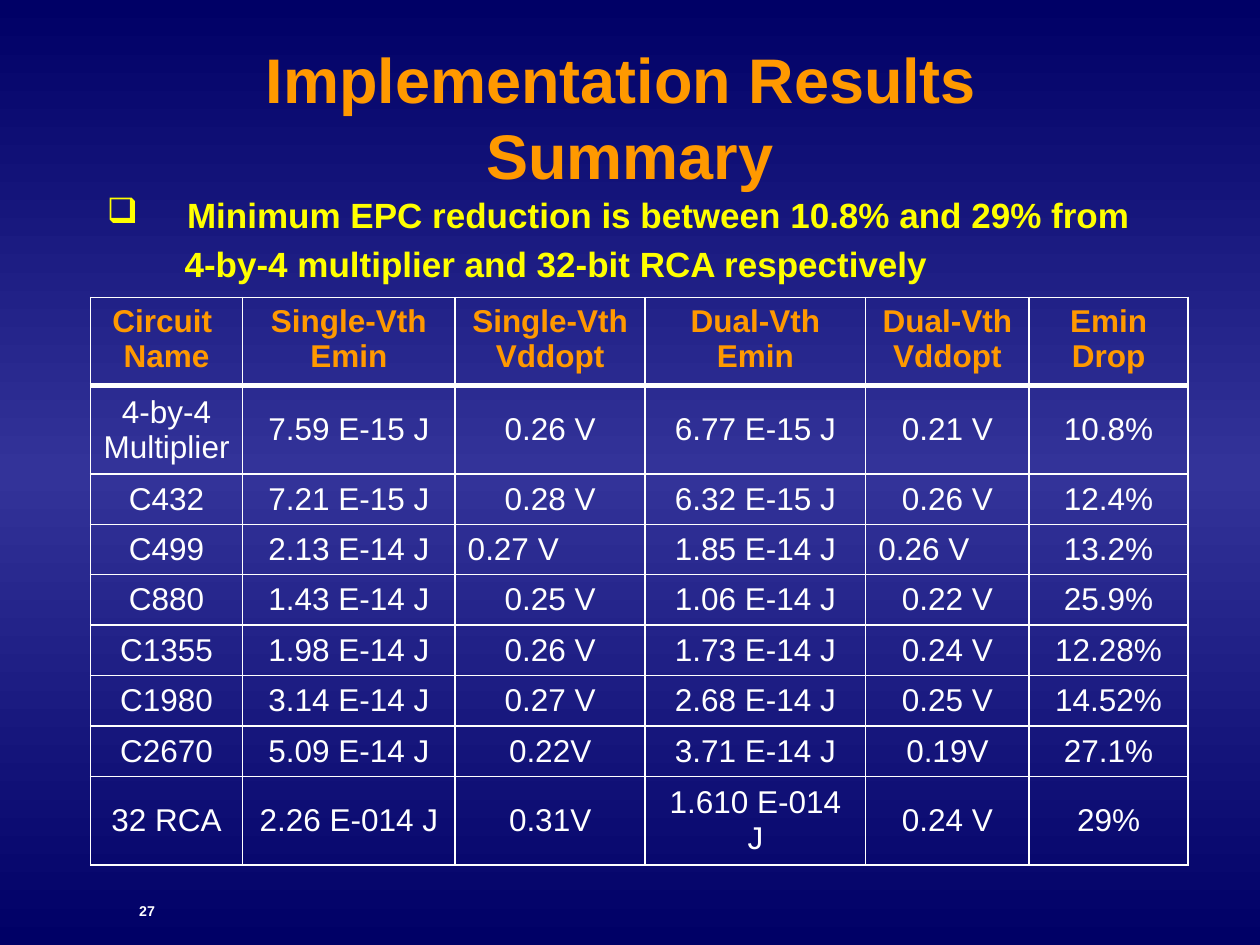
"""Build a results slide with a title, a bullet and a table of circuits."""
from copy import deepcopy

from lxml import etree
from pptx import Presentation
from pptx.dml.color import RGBColor
from pptx.enum.text import MSO_ANCHOR, PP_ALIGN
from pptx.oxml.ns import qn
from pptx.util import Pt

LEFT, MID = PP_ALIGN.LEFT, PP_ALIGN.CENTER
TOP, CORE = MSO_ANCHOR.TOP, MSO_ANCHOR.MIDDLE
FONT = "Arial"
HEX = {"navy": "000066", "blue": "333399", "gold": "FF9900",
       "lemon": "FFFF00", "white": "FFFFFF"}

HEADS = [("Circuit ", "Name"), ("Single-Vth", "Emin"), ("Single-Vth", "Vddopt"),
         ("Dual-Vth", "Emin"), ("Dual-Vth", "Vddopt"), ("Emin", "Drop")]
ROWS = [
    ("4-by-4 Multiplier", "7.59 E-15 J", "0.26 V", "6.77 E-15 J", "0.21 V", "10.8%"),
    ("C432", "7.21 E-15 J", "0.28 V", "6.32 E-15 J", "0.26 V", "12.4%"),
    ("C499", "2.13 E-14 J", "0.27 V", "1.85 E-14 J", "0.26 V", "13.2%"),
    ("C880", "1.43 E-14 J", "0.25 V", "1.06 E-14 J", "0.22 V", "25.9%"),
    ("C1355", "1.98 E-14 J", "0.26 V", "1.73 E-14 J", "0.24 V", "12.28%"),
    ("C1980", "3.14 E-14 J", "0.27 V", "2.68 E-14 J", "0.25 V", "14.52%"),
    ("C2670", "5.09 E-14 J", "0.22V", "3.71 E-14 J", "0.19V", "27.1%"),
    ("32 RCA", "2.26 E-014 J", "0.31V", "1.610 E-014 J", "0.24 V", "29%"),
]
WIDTHS = [86.8, 121.5, 108.6, 126, 93.4, 90.9]
TALL, LOW = 47.4, 27.4
HEIGHTS = [TALL, TALL] + [LOW] * 6 + [TALL]
ASIDE = {(3, 2), (3, 4)}


class Deck:
    """Hold the style and the current slide."""

    def __init__(self, show):
        self.slide = show.slides.add_slide(show.slide_layouts[5])

    def tint(self, name):
        return RGBColor.from_string(HEX[name])

    def back(self, names):
        fill = self.slide.background.fill
        fill.gradient()
        fill.gradient_angle = 270
        stops = self.slide.element.find(".//" + qn("a:gsLst"))
        stops.append(deepcopy(stops[0]))
        for i, (stop, name) in enumerate(zip(fill.gradient_stops, names)):
            stop.color.rgb = self.tint(name)
            stop.position = i / (len(names) - 1)

    def run(self, para, text, size, color, bold=True):
        run = para.add_run()
        run.text = text
        font = run.font
        font.name, font.size, font.bold = FONT, Pt(size), bold
        font.color.rgb = self.tint(color)
        return run

    def paras(self, frame, texts, size, color, bold=True, align=MID):
        for i, text in enumerate(texts):
            para = frame.add_paragraph() if i else frame.paragraphs[0]
            para.alignment = align
            self.run(para, text, size, color, bold)

    def title(self, lines, x, y, w, h):
        shape = self.slide.shapes.title
        shape.left, shape.top, shape.width, shape.height = map(Pt, (x, y, w, h))
        frame = shape.text_frame
        frame.vertical_anchor = CORE
        para = frame.paragraphs[0]
        para.alignment = MID
        for i, line in enumerate(lines):
            if i:
                para.add_line_break()
            self.run(para, line, 36, "gold")

    def box(self, texts, x, y, w, h, size, color, align):
        frame = self.slide.shapes.add_textbox(*map(Pt, (x, y, w, h))).text_frame
        frame.word_wrap = True
        frame.vertical_anchor = TOP
        self.paras(frame, texts, size, color, align=align)
        return frame

    def points(self, texts, x, y, w, h):
        frame = self.box(texts, x, y, w, h, 20, "lemon", LEFT)
        first, second = frame.paragraphs
        for para, left, hang in ((first, 45.8, -45.8), (second, 44.4, 0)):
            para.space_before = Pt(4)
            props = para._p.get_or_add_pPr()
            props.set("marL", str(Pt(left)))
            props.set("indent", str(Pt(hang)))
        props = first._p.get_or_add_pPr()
        paint = etree.SubElement(props, qn("a:buClr"))
        etree.SubElement(paint, qn("a:srgbClr"), val=HEX["lemon"])
        etree.SubElement(props, qn("a:buChar"), char="❑")

    def number(self, text, x, y, w, h):
        frame = self.box([text], x, y, w, h, 14, "white", MID)
        props = frame.paragraphs[0].runs[0].font._element
        props.set("baseline", "-25000")

    def edges(self, cell, top, base):
        props = cell._tc.get_or_add_tcPr()
        sides = {"lnL": 1, "lnR": 1, "lnT": top, "lnB": base}
        for i, (side, wide) in enumerate(sides.items()):
            line = etree.Element(qn("a:" + side), w=str(Pt(wide)))
            fill = etree.SubElement(line, qn("a:solidFill"))
            etree.SubElement(fill, qn("a:srgbClr"), val=HEX["white"])
            props.insert(i, line)

    def table(self, x, y):
        rows = HEADS, *ROWS
        size = sum(WIDTHS), sum(HEIGHTS)
        grid = self.slide.shapes.add_table(
            len(rows), len(HEADS), *map(Pt, (x, y, *size))).table
        grid.first_row = grid.horz_banding = False
        for col, wide in zip(grid.columns, WIDTHS):
            col.width = Pt(wide)
        for row, high in zip(grid.rows, HEIGHTS):
            row.height = Pt(high)
        for r, row in enumerate(rows):
            for c, text in enumerate(row):
                cell = grid.cell(r, c)
                cell.fill.background()
                self.edges(cell, 3 if r == 1 else 1, 1 if r else 3)
                if r:
                    cell.vertical_anchor = CORE
                    align = LEFT if (r, c) in ASIDE else MID
                    self.paras(cell.text_frame, [text], 18, "white", False, align)
                else:
                    self.paras(cell.text_frame, text, 18, "gold")


def main():
    show = Presentation()
    show.slide_width, show.slide_height = Pt(720), Pt(540)
    deck = Deck(show)
    deck.back(["navy", "blue", "navy"])
    deck.title(["Implementation Results ", "Summary"], 36, 21.6, 648, 90)
    deck.number("27", 0, 502.6, 168, 37.4)
    deck.table(51.8, 169.9)
    deck.points(["Minimum EPC reduction is between 10.8% and 29% from",
                 "4-by-4 multiplier and 32-bit RCA respectively"],
                54, 107.3, 643, 58.3)
    show.save("out.pptx")


if __name__ == "__main__":
    main()
